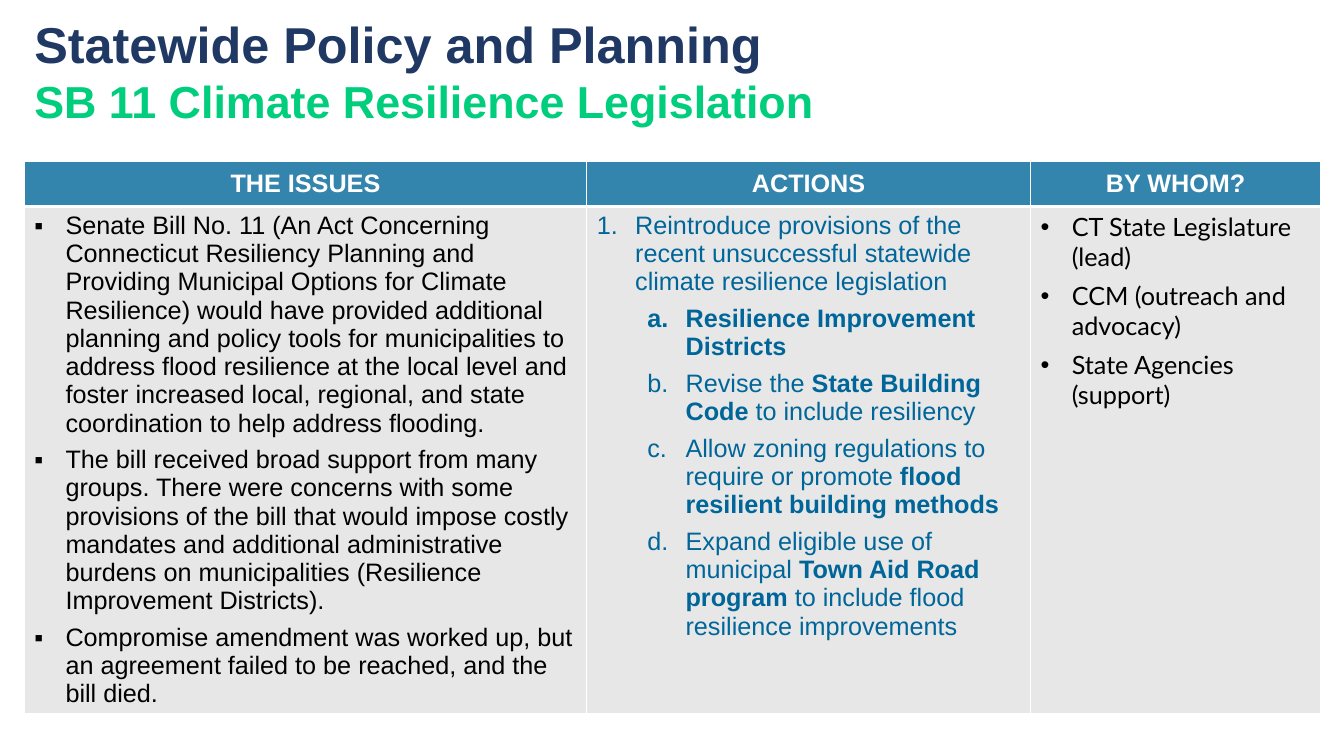
import pptx
import pptx.util
import pptx.dml.color
import pptx.enum.text
import pptx.oxml.ns
import lxml.etree

RGBColor = pptx.dml.color.RGBColor
NAVY = RGBColor(0x20, 0x38, 0x64)
GREEN = RGBColor(0x00, 0xCE, 0x7D)
HEADER_BLUE = RGBColor(0x33, 0x85, 0xAD)
BODY_GREY = RGBColor(0xE7, 0xE7, 0xE7)
ACTION_BLUE = RGBColor(0x00, 0x66, 0x99)
BLACK = RGBColor(0, 0, 0)
WHITE = RGBColor(255, 255, 255)

Inches = pptx.util.Inches
Pt = pptx.util.Pt
qn = pptx.oxml.ns.qn

MARGIN = 0.24
COLUMN_WIDTHS = [5.58, 4.4, 2.88]
ROW_HEIGHTS = [0.45, 4.82]
CONTENT_WIDTH = sum(COLUMN_WIDTHS)

SQUARE = ("buChar", {"char": "▪"}, 0, 0.31, 0.31)
DOT = ("buChar", {"char": "•"}, 0, 0.31, 0.31)
NUMBER = ("buAutoNum", {"type": "arabicPeriod"}, 0, 0.38, 0.38)
LETTER = ("buAutoNum", {"type": "alphaLcPeriod"}, 1, 0.88, 0.38)

COLUMNS = [
    ("THE ISSUES", "Arial", BLACK, [
        (SQUARE, [("Senate Bill No. 11 (An Act Concerning Connecticut Resiliency Planning and "
                   "Providing Municipal Options for Climate Resilience) would have provided "
                   "additional planning and policy tools for municipalities to address flood "
                   "resilience at the local level and foster increased local, regional, and "
                   "state coordination to help address flooding.", False)]),
        (SQUARE, [("The bill received broad support from many groups. There were concerns with "
                   "some provisions of the bill that would impose costly mandates and additional "
                   "administrative burdens on municipalities (Resilience Improvement Districts).",
                   False)]),
        (SQUARE, [("Compromise amendment was worked up, but an agreement failed to be reached, "
                   "and the bill died.", False)]),
    ]),
    ("ACTIONS", "Arial", ACTION_BLUE, [
        (NUMBER, [("Reintroduce provisions of the recent unsuccessful statewide climate "
                   "resilience legislation", False)]),
        (LETTER, [("Resilience Improvement Districts", True)]),
        (LETTER, [("Revise the ", False), ("State Building Code ", True),
                  ("to include resiliency", False)]),
        (LETTER, [("Allow zoning regulations to require or promote ", False),
                  ("flood resilient building methods", True)]),
        (LETTER, [("Expand eligible use of municipal ", False), ("Town Aid Road program ", True),
                  ("to include flood resilience improvements", False)]),
    ]),
    ("BY WHOM?", "Lato", BLACK, [
        (DOT, [("CT State Legislature (lead)", False)]),
        (DOT, [("CCM (outreach and advocacy)", False)]),
        (DOT, [("State Agencies (support)", False)]),
    ]),
]


def style_cell(cell, color, top, bottom):
    properties = cell._tc.get_or_add_tcPr()
    for side, width in (("lnL", 1), ("lnR", 1), ("lnT", top), ("lnB", bottom)):
        border = lxml.etree.SubElement(properties, qn(f"a:{side}"), w=str(Pt(width)))
        border_fill = lxml.etree.SubElement(border, qn("a:solidFill"))
        lxml.etree.SubElement(border_fill, qn("a:srgbClr"), val=str(WHITE))
    cell.fill.solid()
    cell.fill.fore_color.rgb = color


def style_font(font, face, size, color, bold):
    font.name = face
    font.size = Pt(size)
    font.color.rgb = color
    font.bold = bold


deck = pptx.Presentation()
deck.slide_width = Inches(13.33)
deck.slide_height = Inches(7.5)
slide = deck.slides.add_slide(deck.slide_layouts[5])

title = slide.shapes.title
title.left, title.top = Inches(MARGIN), Inches(0.4)
title.width, title.height = Inches(CONTENT_WIDTH), Inches(0.59)
title.text_frame.word_wrap = True
title.text_frame.auto_size = pptx.enum.text.MSO_AUTO_SIZE.NONE
title.text_frame.vertical_anchor = pptx.enum.text.MSO_ANCHOR.MIDDLE
heading = title.text_frame.paragraphs[0]
heading.alignment = pptx.enum.text.PP_ALIGN.LEFT
style_font(heading.font, "Arial", 36, NAVY, True)
topic = heading.add_run()
topic.text = "Statewide Policy and Planning"
style_font(topic.font, "Arial", 36, NAVY, True)
heading.add_line_break()
bill = heading.add_run()
bill.text = "SB 11 Climate Resilience Legislation"
style_font(bill.font, "Arial", 32, GREEN, True)

plan = slide.shapes.add_table(
    len(ROW_HEIGHTS), len(COLUMNS), Inches(MARGIN), Inches(1.6),
    Inches(CONTENT_WIDTH), Inches(sum(ROW_HEIGHTS))).table
for row, height in zip(plan.rows, ROW_HEIGHTS):
    row.height = Inches(height)

for index, (label, face, color, entries) in enumerate(COLUMNS):
    plan.columns[index].width = Inches(COLUMN_WIDTHS[index])

    header = plan.cell(0, index)
    style_cell(header, HEADER_BLUE, 1, 3)
    header.vertical_anchor = pptx.enum.text.MSO_ANCHOR.MIDDLE
    caption = header.text_frame.paragraphs[0]
    caption.text = label
    caption.alignment = pptx.enum.text.PP_ALIGN.CENTER
    style_font(caption.font, "Arial", 18, WHITE, True)

    body = plan.cell(1, index)
    style_cell(body, BODY_GREY, 3, 1)
    for position, (marker, phrases) in enumerate(entries):
        entry = body.text_frame.add_paragraph() if position else body.text_frame.paragraphs[0]
        tag, attributes, level, indent, hanging = marker
        entry.level = level
        entry.space_after = Pt(6)
        layout = entry._p.get_or_add_pPr()
        layout.set("marL", str(Inches(indent)))
        layout.set("indent", str(-Inches(hanging)))
        lxml.etree.SubElement(layout, qn("a:buFont"), typeface="Arial")
        lxml.etree.SubElement(layout, qn(f"a:{tag}"), attributes)
        style_font(entry.font, face, 18, color, phrases[0][1])
        for text, bold in phrases:
            phrase = entry.add_run()
            phrase.text = text
            if bold != phrases[0][1]:
                phrase.font.bold = bold

deck.save("out.pptx")
